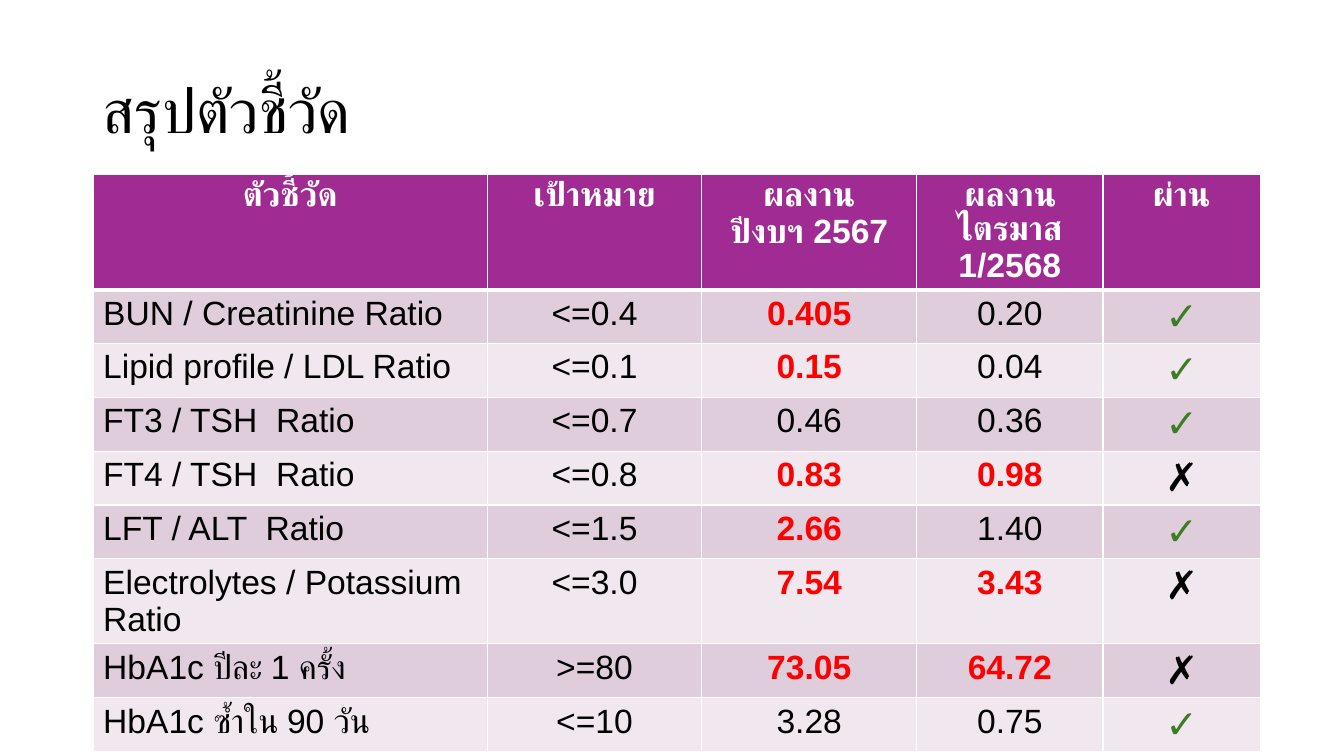
import pptx
import pptx.dml.color
import pptx.enum.text
import pptx.oxml
import pptx.oxml.ns
import pptx.util

Pt = pptx.util.Pt
RGBColor = pptx.dml.color.RGBColor
ALIGN = pptx.enum.text.PP_ALIGN

BLACK = RGBColor(0x00, 0x00, 0x00)
WHITE = RGBColor(0xFF, 0xFF, 0xFF)
RED = RGBColor(0xFF, 0x00, 0x00)
GREEN = RGBColor(0x3B, 0x7D, 0x23)
PURPLE = RGBColor(0xA0, 0x2B, 0x93)
BANDS = [RGBColor(0xDF, 0xCD, 0xDC), RGBColor(0xF0, 0xE8, 0xEE)]

HEADERS = ["ตัวชี้วัด", "เป้าหมาย", "ผลงาน\vปีงบฯ 2567", "ผลงานไตรมาส 1/2568", "ผ่าน"]
INDICATORS = [
    ("BUN / Creatinine Ratio", "<=0.4", "0.405", "0.20"),
    ("Lipid profile / LDL Ratio", "<=0.1", "0.15", "0.04"),
    ("FT3 / TSH  Ratio", "<=0.7", "0.46", "0.36"),
    ("FT4 / TSH  Ratio", "<=0.8", "0.83", "0.98"),
    ("LFT / ALT  Ratio", "<=1.5", "2.66", "1.40"),
    ("Electrolytes / Potassium  Ratio", "<=3.0", "7.54", "3.43"),
    ("HbA1c ปีละ 1 ครั้ง", ">=80", "73.05", "64.72"),
    ("HbA1c ซ้ำใน 90 วัน", "<=10", "3.28", "0.75"),
]
COLUMN_WIDTHS = [281.5, 153.4, 153.4, 133.2, 112.3]
ROW_HEIGHT = 29.2


def write_text(text_frame, text, font="Arial", size=24, color=BLACK, bold=False,
               align=ALIGN.CENTER, line_spacing=None):
    paragraph = text_frame.paragraphs[0]
    paragraph.text = text
    paragraph.alignment = align
    paragraph.line_spacing = line_spacing
    for run in paragraph.runs:
        run.font.name = font
        run.font.size = Pt(size)
        run.font.bold = bold
        run.font.color.rgb = color


def add_borders(cell, top=1, bottom=1):
    """Add white borders; call before the fill is set, as the XML order demands."""
    properties = cell._tc.get_or_add_tcPr()
    for side, width in (("L", 1), ("R", 1), ("T", top), ("B", bottom)):
        properties.append(pptx.oxml.parse_xml(
            f'<a:ln{side} {pptx.oxml.ns.nsdecls("a")} w="{Pt(width)}">'
            f'<a:solidFill><a:srgbClr val="{WHITE}"/></a:solidFill></a:ln{side}>'))


def fill_cell(cell, text, fill, top=1, bottom=1, **text_format):
    add_borders(cell, top, bottom)
    cell.fill.solid()
    cell.fill.fore_color.rgb = fill
    write_text(cell.text_frame, text, **text_format)


def meets_target(result, target):
    limit = float(target[2:])
    return float(result) <= limit if target.startswith("<=") else float(result) >= limit


def place_title(slide, left, top, width, height):
    title = slide.shapes.title
    title.left, title.top, title.width, title.height = Pt(left), Pt(top), Pt(width), Pt(height)
    title.text_frame.vertical_anchor = pptx.enum.text.MSO_ANCHOR.MIDDLE
    write_text(title.text_frame, "สรุปตัวชี้วัด", font="Lato", size=44,
               align=ALIGN.LEFT, line_spacing=0.9)


def add_indicator_table(slide, left, top):
    row_count = len(INDICATORS) + 1
    table = slide.shapes.add_table(
        row_count, len(HEADERS), Pt(left), Pt(top),
        Pt(sum(COLUMN_WIDTHS)), Pt(ROW_HEIGHT * row_count)).table
    for column, width in zip(table.columns, COLUMN_WIDTHS):
        column.width = Pt(width)
    for row in table.rows:
        row.height = Pt(ROW_HEIGHT)

    for column, header in enumerate(HEADERS):
        fill_cell(table.cell(0, column), header, PURPLE, bottom=3, color=WHITE, bold=True)

    for row, (name, target, *results) in enumerate(INDICATORS, start=1):
        band = {"fill": BANDS[(row - 1) % 2], "top": 3 if row == 1 else 1}
        fill_cell(table.cell(row, 0), name, align=ALIGN.LEFT, **band)
        fill_cell(table.cell(row, 1), target, **band)
        for column, result in enumerate(results, start=2):
            missed = not meets_target(result, target)
            fill_cell(table.cell(row, column), result, bold=missed,
                      color=RED if missed else BLACK, **band)
        passed = meets_target(results[-1], target)
        fill_cell(table.cell(row, 4), "✓" if passed else "✗", size=28, bold=True,
                  color=GREEN if passed else BLACK, **band)


def main():
    presentation = pptx.Presentation()
    presentation.slide_width, presentation.slide_height = Pt(960), Pt(540)
    slide = presentation.slides.add_slide(presentation.slide_layouts.get_by_name("Title Only"))
    place_title(slide, 66, 28.75, 828, 104.4)
    add_indicator_table(slide, 66.5, 124.9)
    presentation.save("out.pptx")


if __name__ == "__main__":
    main()
